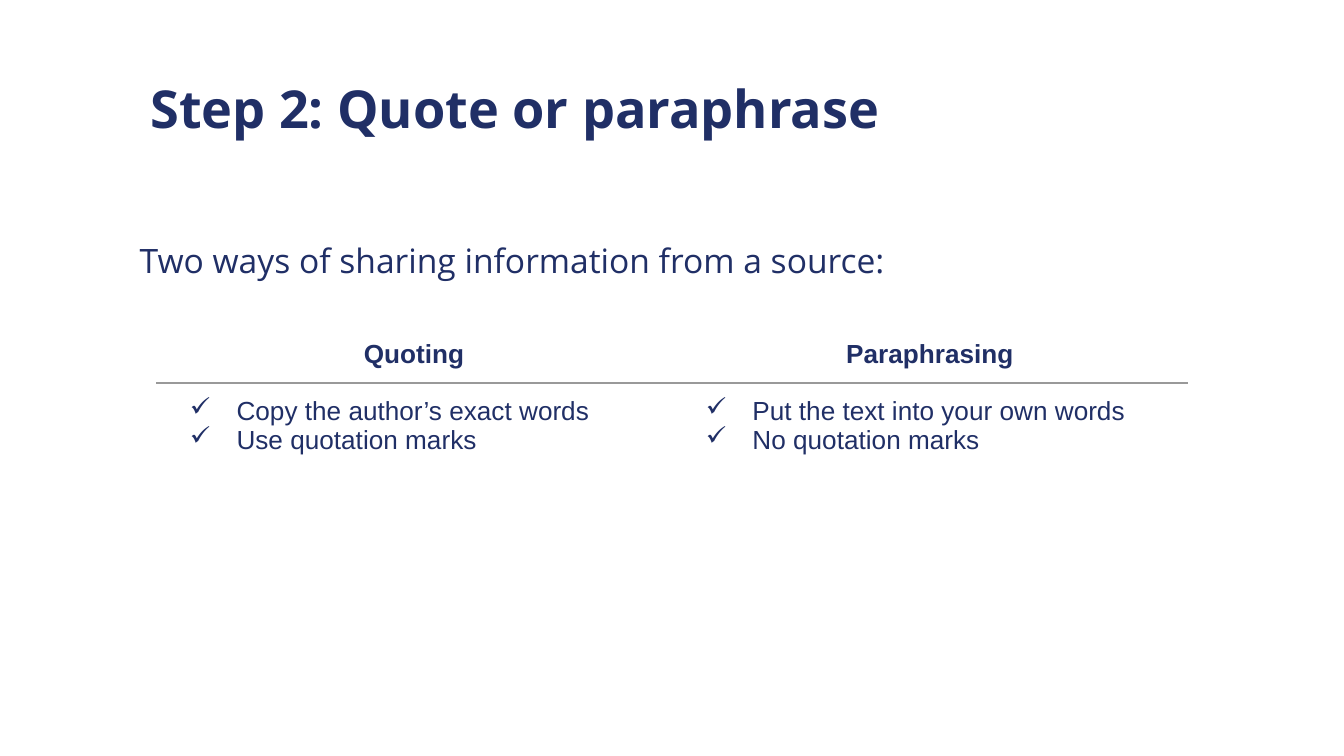
"""Build the slide that compares quoting with paraphrasing."""
from lxml import etree
from pptx import Presentation
from pptx.dml.color import RGBColor
from pptx.enum.text import MSO_ANCHOR, MSO_AUTO_SIZE, PP_ALIGN
from pptx.oxml import parse_xml
from pptx.oxml.ns import nsdecls, qn
from pptx.util import Cm, Pt

CENTER, LEFT = PP_ALIGN.CENTER, PP_ALIGN.LEFT
TOP, NO_AUTOFIT = MSO_ANCHOR.TOP, MSO_AUTO_SIZE.NONE
NAVY, GREY = "202F66", "999999"
NO_STYLE = "{2D5ABB26-0587-4C30-8999-92F81FD0307C}"
PADDING = Cm(0.25)


def add_text(paragraph, text, font_name, size, bold):
    run = paragraph.add_run()
    run.text = text
    run.font.name = font_name
    run.font.size = Pt(size)
    run.font.bold = bold
    run.font.color.rgb = RGBColor.from_string(NAVY)


def set_bullet(paragraph, character, margin, indent):
    properties = paragraph._p.get_or_add_pPr()
    properties.set("marL", str(margin))
    properties.set("indent", str(indent))
    if character:
        properties.append(parse_xml(
            f'<a:buClr {nsdecls("a")}><a:srgbClr val="{NAVY}"/></a:buClr>'))
        etree.SubElement(properties, qn("a:buChar"), char=character)
    else:
        etree.SubElement(properties, qn("a:buNone"))


presentation = Presentation()
presentation.slide_width = Cm(25.4)
presentation.slide_height = Cm(14.29)
slide = presentation.slides.add_slide(presentation.slide_layouts[1])

headings = [
    (slide.shapes.title, "Step 2: Quote or paraphrase", 28, True, 1,
     (2.59, 1.2, 20, 1.6)),
    (slide.placeholders[1], "Two ways of sharing information from a source:",
     18, False, 1.5, (2.39, 3.9, 20, 1.35)),
]
for shape, text, size, bold, spacing, box in headings:
    shape.left, shape.top, shape.width, shape.height = map(Cm, box)
    frame = shape.text_frame
    frame.word_wrap = True
    frame.auto_size = NO_AUTOFIT
    frame.vertical_anchor = TOP
    frame.margin_left = frame.margin_right = PADDING
    frame.margin_top = frame.margin_bottom = PADDING
    paragraph = frame.paragraphs[0]
    set_bullet(paragraph, None, 0, 0)
    paragraph.alignment = LEFT
    paragraph.line_spacing = spacing
    paragraph.space_before = Pt(0)
    add_text(paragraph, text, "Open Sans", size, bold)

columns = [
    ("Quoting", ["Copy the author’s exact words", "Use quotation marks"]),
    ("Paraphrasing", ["Put the text into your own words", "No quotation marks"]),
]
column_width, row_height = Cm(9.75), Cm(1.07)
table = slide.shapes.add_table(
    2, len(columns), Cm(2.95), Cm(6.17),
    column_width * len(columns), row_height * 2).table
table.first_row = table.horz_banding = False
table._tbl.tblPr.find(qn("a:tableStyleId")).text = NO_STYLE

for column, (heading, points) in enumerate(columns):
    for row, (lines, edge) in enumerate([([heading], "lnB"), (points, "lnT")]):
        cell = table.cell(row, column)
        cell.fill.background()
        cell.vertical_anchor = TOP
        cell.margin_left = cell.margin_right = PADDING
        cell.margin_top = cell.margin_bottom = PADDING
        cell._tc.get_or_add_tcPr().insert(0, parse_xml(
            f'<a:{edge} {nsdecls("a")} w="{Pt(0.75)}"><a:solidFill>'
            f'<a:srgbClr val="{GREY}"/></a:solidFill></a:{edge}>'))
        frame = cell.text_frame
        for number, line in enumerate(lines):
            paragraph = frame.add_paragraph() if number else frame.paragraphs[0]
            if row:
                set_bullet(paragraph, "✓", Cm(1.27), Cm(-0.88))
            paragraph.alignment = LEFT if row else CENTER
            add_text(paragraph, line, "Arial", 14, row == 0)

presentation.save("out.pptx")
